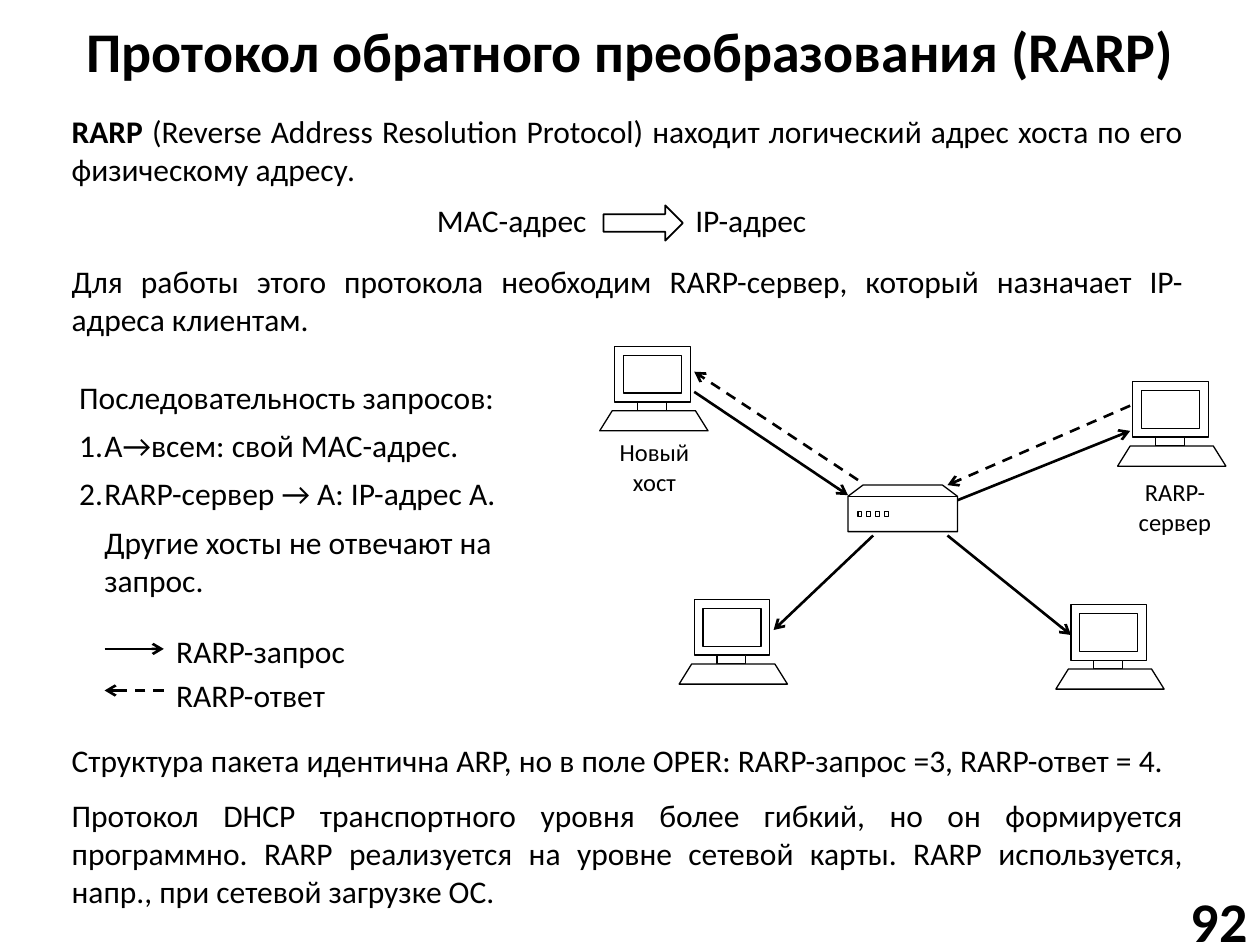
from lxml.etree import SubElement
from pptx import Presentation
from pptx.dml.color import RGBColor
from pptx.enum.dml import MSO_LINE_DASH_STYLE as Dash
from pptx.enum.shapes import MSO_CONNECTOR as Connector, MSO_SHAPE as Shape
from pptx.enum.text import MSO_ANCHOR as Anchor, PP_ALIGN as Align
from pptx.oxml.ns import qn
from pptx.util import Inches, Pt

BLACK, WHITE = "000000", "FFFFFF"
FONT = "Calibri"

# Content: a paragraph is a string or a list of (text, bold) runs
TITLE = "Протокол обратного преобразования (RARP)"
PAGE_NUMBER = "92"
BODY = [  # top, height, paragraph
    (0.84, 0.71, [("RARP", True),
                  (" (Reverse Address Resolution Protocol) находит логический "
                   "адрес хоста по его физическому адресу.", False)]),
    (2.03, 0.71, "Для работы этого протокола необходим RARP-сервер, "
                 "который назначает IP-адреса клиентам."),
    (5.83, 0.4, "Структура пакета идентична ARP, но в поле OPER: "
                "RARP-запрос =3, RARP-ответ = 4."),
    (6.27, 1.01, "Протокол DHCP транспортного уровня более гибкий, но он "
                 "формируется программно. RARP реализуется на уровне сетевой "
                 "карты. RARP используется, напр., при сетевой загрузке ОС."),
]
LABELS = [  # left, top, width, height, text, size, alignment
    (3.37, 1.55, 1.46, 0.4, "MAC-адрес", 18, Align.LEFT),
    (5.42, 1.55, 1.14, 0.4, "IP-адрес", 18, Align.LEFT),
    (4.76, 3.42, 0.87, 0.57, "Новый хост", 14, Align.CENTER),
    (8.89, 3.74, 0.87, 0.57, "RARP-сервер", 14, Align.CENTER),
    (1.3, 4.97, 2.22, 0.4, "RARP-запрос", 18, Align.LEFT),
    (1.3, 5.32, 1.86, 0.4, "RARP-ответ", 18, Align.LEFT),
]
SEQUENCE = [
    "Последовательность запросов:",
    "A→всем: свой MAC-адрес.",
    "RARP-сервер → A: IP-адрес A.",
    "Другие хосты не отвечают на запрос.",
]
NUMBERED = (1, 2)
COMPUTERS = [(4.76, 2.75), (8.87, 3.03), (8.38, 4.8), (5.39, 4.76)]
REQUESTS = [  # start, end
    ((5.51, 3.11), (6.73, 3.93)),
    ((7.6, 3.97), (8.97, 3.42)),
    ((7.52, 4.25), (8.5, 5.04)),
    ((6.93, 4.25), (6.14, 5)),
    ((0.83, 5.15), (1.3, 5.15)),
]
REPLIES = [
    ((6.81, 3.81), (5.51, 2.95)),
    ((8.97, 3.22), (7.52, 3.85)),
    ((1.3, 5.48), (0.83, 5.48)),
]


def color(hex_text):
    return RGBColor.from_string(hex_text)


def write(shape, paragraphs, size=18, bold=False, align=Align.LEFT,
          anchor=Anchor.TOP, before=0):
    frame = shape.text_frame
    frame.word_wrap = True
    frame.vertical_anchor = anchor
    for index, content in enumerate(paragraphs):
        paragraph = frame.add_paragraph() if index else frame.paragraphs[0]
        paragraph.alignment = align
        if index:
            paragraph.space_before = Pt(before)
        runs = [(content, bold)] if isinstance(content, str) else content
        for text, run_bold in runs:
            run = paragraph.add_run()
            run.text = text
            run.font.name, run.font.size = FONT, Pt(size)
            run.font.bold = run_bold
            run.font.color.rgb = color(BLACK)
    return frame


def add_text(box, paragraphs, **style):
    area = slide.shapes.add_textbox(*map(Inches, box))
    return write(area, paragraphs, **style)


def outline(shape, width=0.75, fill=WHITE):
    shape.shadow.inherit = False
    if fill:
        shape.fill.solid()
        shape.fill.fore_color.rgb = color(fill)
    else:
        shape.fill.background()
    shape.line.color.rgb = color(BLACK)
    shape.line.width = Pt(width)


def add_outline(shapes, contours):
    """Draw one freeform from (points, closed) contours."""
    builder = None
    for points, closed in contours:
        start, *rest = [(Inches(x), Inches(y)) for x, y in points]
        if builder is None:
            builder = shapes.build_freeform(*start)
        else:
            builder.move_to(*start)
        builder.add_line_segments(rest, close=closed)
    outline(builder.convert_to_shape())


def add_computer(x, y):
    parts = slide.shapes.add_group_shape().shapes

    def add_part(dx, dy, width, height):
        box = map(Inches, (x + dx, y + dy, width, height))
        outline(parts.add_shape(Shape.RECTANGLE, *box))

    add_part(0.12, 0, 0.6, 0.44)     # case
    add_part(0.3, 0.44, 0.23, 0.07)  # stand
    keyboard = [(x, y + 0.67), (x + 0.1, y + 0.51),
                (x + 0.76, y + 0.51), (x + 0.86, y + 0.67)]
    add_outline(parts, [(keyboard, True)])
    add_part(0.19, 0.07, 0.46, 0.3)  # screen


def add_switch(left, top, right, bottom, ports=4):
    edge = top + 0.09
    body = [(left, edge), (left + 0.12, top), (right - 0.12, top),
            (right, edge), (right, bottom), (left, bottom)]
    contours = [(body, True), ([(left, edge), (right, edge)], False)]
    for index in range(ports):
        x, y = left + 0.08 + 0.07 * index, top + 0.21
        port = [(x, y), (x, y + 0.04), (x + 0.03, y + 0.04), (x + 0.03, y)]
        contours.append((port, True))
    add_outline(slide.shapes, contours)


def add_arrow(start, end, dashed=False):
    arrow = slide.shapes.add_connector(
        Connector.STRAIGHT, *map(Inches, (*start, *end)))
    arrow.line.color.rgb = color(BLACK)
    arrow.line.width = Pt(1.5)
    if dashed:
        arrow.line.dash_style = Dash.DASH
    properties = arrow.element.spPr
    SubElement(properties.find(qn("a:ln")), qn("a:tailEnd"), type="arrow")
    SubElement(properties, qn("a:effectLst"))


prs = Presentation()
prs.slide_width, prs.slide_height = Inches(10), Inches(7.5)
slide = prs.slides.add_slide(prs.slide_layouts[5])

# Title and page number
title = slide.shapes.title
title.left, title.top, title.width, title.height = map(
    Inches, (0.28, 0.05, 9.45, 0.69))
write(title, [TITLE], size=32, bold=True, align=Align.CENTER,
      anchor=Anchor.MIDDLE)
add_text((8.86, 7.1, 1.14, 0.4), [PAGE_NUMBER], size=32, bold=True,
         align=Align.RIGHT, anchor=Anchor.MIDDLE)

# Body text and the address conversion arrow
for top, height, paragraph in BODY:
    add_text((0.47, top, 9.02, height), [paragraph], align=Align.JUSTIFY)
conversion = slide.shapes.add_shape(
    Shape.RIGHT_ARROW, *map(Inches, (4.79, 1.63, 0.63, 0.28)))
outline(conversion, width=1, fill=None)

# Network diagram and legend
for corner in COMPUTERS:
    add_computer(*corner)
for start, end in REQUESTS:
    add_arrow(start, end)
add_switch(6.73, 3.85, 7.6, 4.22)
for start, end in REPLIES:
    add_arrow(start, end, dashed=True)
for *box, text, size, align in LABELS:
    add_text(box, [text], size=size, align=align)

# Request sequence
sequence = add_text((0.53, 2.95, 4.07, 1.87), SEQUENCE, before=6)
for index, step in enumerate(sequence.paragraphs[1:], start=1):
    properties = step._p.get_or_add_pPr()
    properties.set("marL", str(Inches(0.2)))
    if index in NUMBERED:
        properties.set("indent", str(-Inches(0.2)))
        SubElement(properties, qn("a:buFont"), typeface="+mj-lt")
        SubElement(properties, qn("a:buAutoNum"), type="arabicPeriod")

prs.save("out.pptx")
